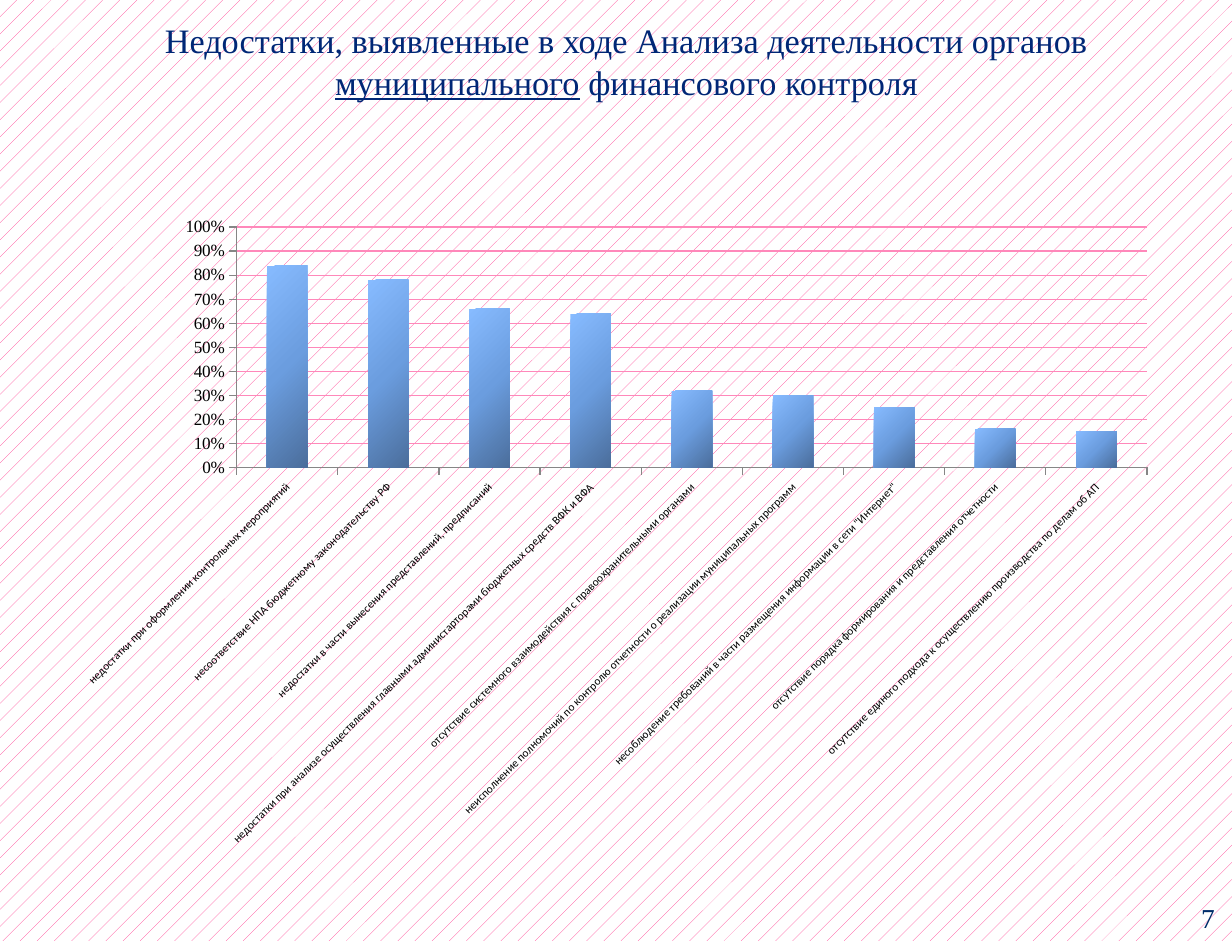
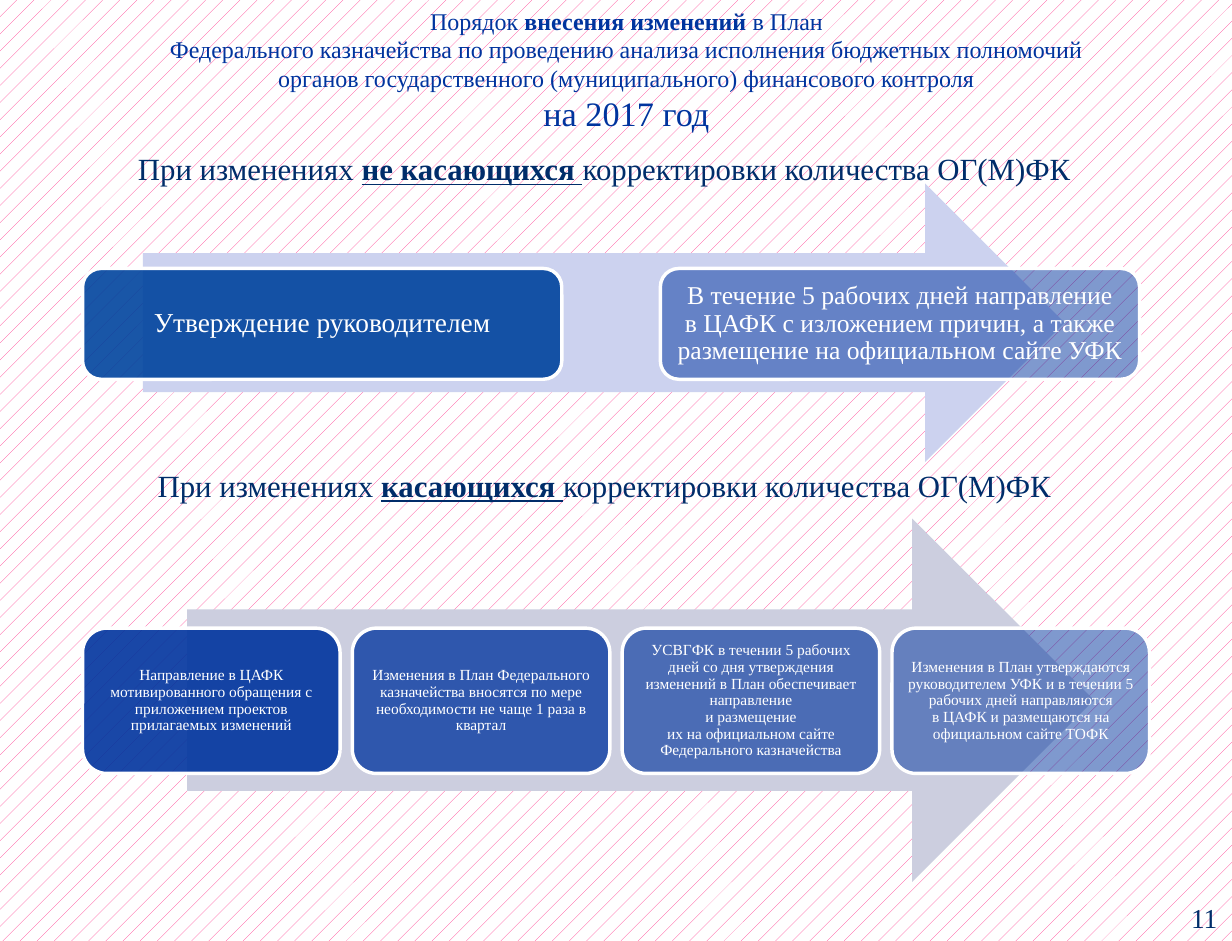
"""Builds two slides on the analysis of financial control bodies."""
from pptx import Presentation
from pptx.chart.data import CategoryChartData
from pptx.dml.color import RGBColor
from pptx.enum.chart import XL_CHART_TYPE as ChartType, XL_TICK_MARK as TickMark
from pptx.enum.dml import MSO_PATTERN as Pattern
from pptx.enum.shapes import MSO_SHAPE as ShapeKind
from pptx.enum.text import MSO_ANCHOR as Anchor, MSO_AUTO_SIZE as AutoSize, PP_ALIGN as Align
from pptx.oxml import parse_xml
from pptx.oxml.ns import nsdecls
from pptx.util import Inches, Pt

COLORS = {
    "title": "002776", "plan_title": "00349E", "text": "002D6A", "white": "FFFFFF",
    "pattern": "FF388C", "grid": "FF88BA", "axis": "868686", "black": "000000",
    "approval": "00449E", "step": "00349E", "short_arrow": "CCD2EF", "long_arrow": "CCCEDF",
    "bar_dark": "4B6E9C", "bar_middle": "6B9DDF", "bar_light": "87BBFF",
}
SERIF, SANS = "Times New Roman", "Calibri"
COLUMNS, ROWS = 100, 76.4
WIDTH, HEIGHT = Inches(10), Inches(7.64)

SHORTCOMINGS = {
    "недостатки при оформлении контрольных мероприятий": 84,
    "несоответствие НПА бюджетному законодательству РФ": 78,
    "недостатки в части вынесения представлений, предписаний": 66,
    "недостатки при анализе осуществления главными администарторами бюджетных средств ВФК и ВФА": 64,
    "отсутствие системного взаимодействия с правоохранительными органами": 32,
    "неисполнение полномочий по контролю отчетности о реализации муниципальных программ": 30,
    "несоблюдение требований в части размещения информации в сети \"Интернет\"": 25,
    "отсутствие порядка формирования и представления отчетности": 16,
    "отсутствие единого подхода к осуществлению производства по делам об АП": 15,
}
APPROVAL_STEPS = [
    ("Утверждение руководителем", "approval", 90, 16),
    ("В течение 5 рабочих дней направление\nв ЦАФК с изложением причин, а также размещение "
     "на официальном сайте УФК", "step", 50, 15),
]
CHANGE_STEPS = [
    ("Направление в ЦАФК мотивированного обращения с приложением проектов прилагаемых изменений",
     "step", 90, 9),
    ("Изменения в План Федерального казначейства вносятся по мере необходимости не чаще "
     "1 раза в квартал", "step", 77, 9),
    ("УСВГФК в течении 5 рабочих дней со дня утверждения изменений в План обеспечивает "
     "направление\nи размещение\nих на официальном сайте Федерального казначейства",
     "step", 63, 9),
    ("Изменения в План утверждаются руководителем УФК и в течении 5 рабочих дней "
     "направляются\nв ЦАФК и размещаются на официальном сайте ТОФК", "step", 50, 9),
]


def rgb(name):
    """Return the named colour."""
    return RGBColor.from_string(COLORS[name])


class Deck:
    """Holds the shared style and the current slide."""

    def __init__(self):
        """Open an empty presentation of the right size."""
        self.presentation = Presentation()
        self.presentation.slide_width, self.presentation.slide_height = WIDTH, HEIGHT
        self.slide = None

    def box(self, left, top, width, height):
        """Turn grid columns and rows into lengths."""
        column, row = WIDTH / COLUMNS, HEIGHT / ROWS
        return (round(left * column), round(top * row),
                round(width * column), round(height * row))

    def add_slide(self, number, number_left, number_width):
        """Start a patterned slide with its number in the corner."""
        self.slide = self.presentation.slides.add_slide(self.presentation.slide_layouts[6])
        fill = self.slide.background.fill
        fill.patterned()
        fill.pattern = Pattern.PERCENT_5
        fill.fore_color.rgb, fill.back_color.rgb = rgb("pattern"), rgb("white")
        self.text((number_left, 72.7, number_width, 3.7), [([number], 16)], "text",
                  align=Align.LEFT, wrap=False)

    def fill_paragraph(self, paragraph, pieces, size, color, align=Align.CENTER):
        """Fill a paragraph with plain strings and (text, bold, underline) runs."""
        paragraph.alignment = align
        font = paragraph.font
        font.name, font.size, font.color.rgb = SERIF, Pt(size), rgb(color)
        for piece in pieces:
            text, bold, underline = (piece, None, None) if isinstance(piece, str) else piece
            for index, line in enumerate(text.split("\n")):
                if index:
                    paragraph.add_line_break()
                run = paragraph.add_run()
                run.text = line
                run.font.bold, run.font.underline = bold, underline

    def text(self, place, paragraphs, color, align=Align.CENTER, wrap=True):
        """Add a text box of (pieces, size) paragraphs."""
        frame = self.slide.shapes.add_textbox(*self.box(*place)).text_frame
        frame.word_wrap, frame.auto_size = wrap, AutoSize.SHAPE_TO_FIT_TEXT
        for index, (pieces, size) in enumerate(paragraphs):
            paragraph = frame.add_paragraph() if index else frame.paragraphs[0]
            self.fill_paragraph(paragraph, pieces, size, color, align)
        return frame

    def title(self, top, height, paragraphs, color):
        """Add the slide title."""
        frame = self.text((12, top, 77.7, height), paragraphs, color)
        frame.margin_left = frame.margin_right = Inches(0.07)
        frame.margin_top = frame.margin_bottom = Inches(0.04)

    def heading(self, top, emphasis):
        """Add the heading over a process."""
        pieces = ["При изменениях ", (emphasis, True, True), "корректировки количества ОГ(М)ФК"]
        self.text((8.1, top, 81.9, 7.1), [(pieces, 18)], "text")

    def shape(self, group, kind, place, color):
        """Add a filled shape without outline to a group."""
        shape = group.shapes.add_shape(kind, *self.box(*place))
        shape.shadow.inherit = False
        shape.fill.solid()
        shape.fill.fore_color.rgb = rgb(color)
        shape.line.fill.background()
        return shape

    def card(self, group, place, step, margin):
        """Add a translucent rounded card with its text."""
        text, color, opacity, size = step
        card = self.shape(group, ShapeKind.ROUNDED_RECTANGLE, place, color)
        color_element = card._element.spPr.find(".//{*}solidFill/{*}srgbClr")
        color_element.append(parse_xml(f'<a:alpha {nsdecls("a")} val="{opacity * 1000}"/>'))
        card.line.color.rgb, card.line.width = rgb("white"), Pt(2)
        frame = card.text_frame
        frame.word_wrap, frame.vertical_anchor = True, Anchor.MIDDLE
        frame.margin_left = frame.margin_right = Inches(margin)
        frame.margin_top = frame.margin_bottom = Inches(margin)
        paragraph = frame.paragraphs[0]
        paragraph.line_spacing = 0.9
        self.fill_paragraph(paragraph, [text], size, "white")

    def process(self, arrow_place, arrow_color, steps, first_card, pitch, margin):
        """Add an arrow with evenly spaced cards on it."""
        group = self.slide.shapes.add_group_shape()
        self.shape(group, ShapeKind.RIGHT_ARROW, arrow_place, arrow_color)
        left, *rest = first_card
        for index, step in enumerate(steps):
            self.card(group, (left + index * pitch, *rest), step, margin)

    def share_chart(self, place, shares):
        """Add a column chart of shares out of one hundred percent."""
        data = CategoryChartData()
        data.categories = list(shares)
        data.add_series("Series 1", shares.values())
        remainders = [100 - share for share in shares.values()]
        data.add_series("Series 2", remainders)
        chart = self.slide.shapes.add_chart(
            ChartType.COLUMN_STACKED_100, *self.box(*place), data).chart
        chart.has_legend = chart.has_title = False
        chart.font.name, chart.font.size, chart.font.color.rgb = SANS, Pt(10), rgb("black")
        plot = chart.plots[0]
        plot.gap_width, plot.overlap, plot.vary_by_categories = 150, 100, False
        for series in plot.series:
            series.format.fill.background()
        self.shade(plot.series[0])
        for axis in (chart.category_axis, chart.value_axis):
            axis.major_tick_mark, axis.minor_tick_mark = TickMark.OUTSIDE, TickMark.NONE
            axis.format.line.color.rgb = rgb("axis")
        chart.category_axis.tick_labels.font.size = Pt(6.7)
        chart.category_axis._element.txPr.bodyPr.set("rot", "-2700000")
        value_axis = chart.value_axis
        value_axis.minimum_scale, value_axis.maximum_scale, value_axis.major_unit = 0, 1, 0.1
        labels = value_axis.tick_labels
        labels.font.name, labels.font.size = SERIF, Pt(10)
        labels.number_format, labels.number_format_is_linked = "0%", False
        line = value_axis.major_gridlines.format.line
        line.color.rgb, line.width = rgb("grid"), Pt(0.75)

    def shade(self, series):
        """Give a series a gradient that lightens away from its lower right corner."""
        stops = "".join(
            f'<a:gs pos="{position * 1000}"><a:srgbClr val="{COLORS[name]}"/></a:gs>'
            for position, name in ((0, "bar_dark"), (50, "bar_middle"), (100, "bar_light")))
        gradient = parse_xml(
            f'<a:gradFill {nsdecls("a")}><a:gsLst>{stops}</a:gsLst><a:path path="circle">'
            '<a:fillToRect l="100000" t="100000" r="0" b="0"/></a:path></a:gradFill>')
        properties = series._element.get_or_add_spPr()
        properties.replace(properties.find("{*}noFill"), gradient)


def build_shortcomings(deck):
    """Build the slide of shortcomings found."""
    deck.add_slide("7", 96.5, 3.1)
    deck.share_chart((5.1, 16.6, 89.8, 53.1), SHORTCOMINGS)
    deck.title(1.2, 7.5, [(["Недостатки, выявленные в ходе Анализа деятельности органов ",
                            ("муниципального", None, True), " финансового контроля"], 20)],
               "title")


def build_plan_changes(deck):
    """Build the slide of how the plan is changed."""
    deck.add_slide("11", 95.7, 4.3)
    deck.title(0.1, 11.2, [
        (["Порядок ", ("внесения изменений ", True, None), "в План"], 14),
        (["Федерального казначейства по проведению анализа исполнения бюджетных полномочий "
          "органов государственного (муниципального) финансового контроля"], 14),
        (["на 2017 год"], 20)], "plan_title")
    deck.process((11.6, 14.9, 74.8, 22.6), "short_arrow", APPROVAL_STEPS,
                 (6.7, 21.8, 38.9, 9), 46.9, 0.07)
    deck.heading(11.7, "не касающихся ")
    deck.heading(37.4, "касающихся ")
    deck.process((15.2, 42.1, 73.6, 29.5), "long_arrow", CHANGE_STEPS,
                 (6.7, 51, 20.9, 11.8), 21.9, 0.04)


def main():
    """Build both slides and save them."""
    deck = Deck()
    build_shortcomings(deck)
    build_plan_changes(deck)
    deck.presentation.save("out.pptx")


if __name__ == "__main__":
    main()
